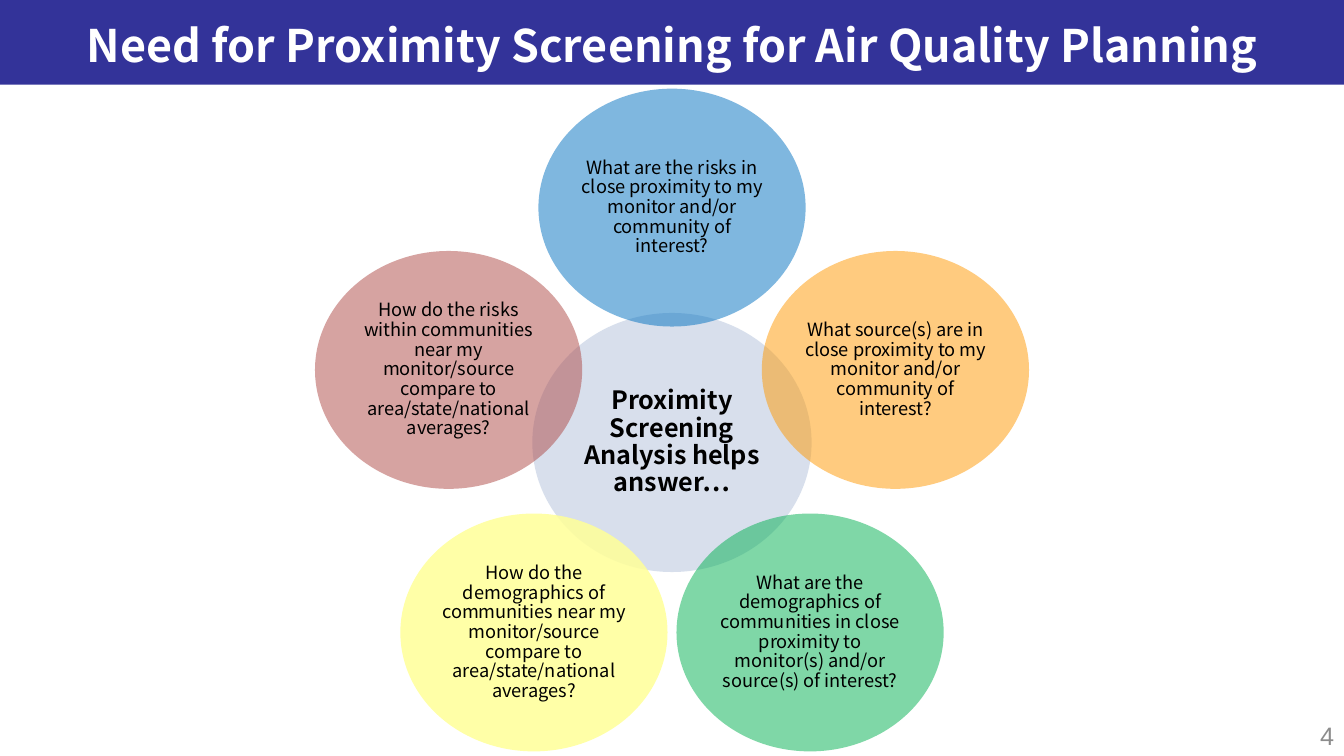
from math import cos, radians, sin

from lxml import etree
from pptx import Presentation
from pptx.dml.color import RGBColor
from pptx.enum.shapes import MSO_SHAPE as Shape
from pptx.enum.text import MSO_ANCHOR as Anchor, PP_ALIGN as Align
from pptx.oxml.ns import qn
from pptx.util import Inches, Pt

WHITE = RGBColor(0xFF, 0xFF, 0xFF)
BLACK = RGBColor(0x00, 0x00, 0x00)
GRAY = RGBColor(0x8C, 0x8C, 0x8C)
NAVY = RGBColor(0x33, 0x33, 0x99)
PALE_BLUE = RGBColor(0xB2, 0xC1, 0xDB)
BLUE = RGBColor(0x00, 0x70, 0xC0)
ORANGE = RGBColor(0xFF, 0x99, 0x00)
GREEN = RGBColor(0x00, 0xB0, 0x50)
YELLOW = RGBColor(0xFF, 0xFF, 0x99)
RED = RGBColor(0xAE, 0x48, 0x45)

TEXT_FONT = "Noto Sans CJK SC"
SLIDE_WIDTH, SLIDE_HEIGHT = 13.33, 7.5
CENTER_X, CENTER_Y = SLIDE_WIDTH / 2, 4.39
RING_RADIUS = 2.33

# Clockwise from the top: question, colour, opacity in percent
QUESTIONS = [
    ("What are the risks in close proximity to my monitor and/or "
     "community of interest?", BLUE, 50),
    ("What source(s) are in close proximity to my monitor and/or "
     "community of interest?", ORANGE, 50),
    ("What are the demographics of communities in close proximity to "
     "monitor(s) and/or source(s) of interest?", GREEN, 50),
    ("How do the demographics of communities near my monitor/source "
     "compare to area/state/national averages?", YELLOW, 86),
    ("How do the risks within communities near my monitor/source "
     "compare to area/state/national averages?", RED, 50),
]


def write_text(shape, text, size, color=BLACK, font=TEXT_FONT, bold=False,
               align=Align.CENTER, anchor=Anchor.MIDDLE, spacing=None, inset=None):
    frame = shape.text_frame
    frame.word_wrap = True
    frame.vertical_anchor = anchor
    if inset is not None:
        frame.margin_left = frame.margin_right = Inches(inset)
        frame.margin_top = frame.margin_bottom = Inches(inset)
    paragraph = frame.paragraphs[0]
    paragraph.alignment = align
    paragraph.line_spacing = spacing
    run = paragraph.add_run()
    run.text = text
    run.font.size = Pt(size)
    run.font.name = font
    run.font.bold = bold
    run.font.color.rgb = color


def add_filled(slide, kind, left, top, width, height, color, opacity=100):
    shape = slide.shapes.add_shape(
        kind, Inches(left), Inches(top), Inches(width), Inches(height))
    shape.shadow.inherit = False
    shape.line.fill.background()
    shape.fill.solid()
    shape.fill.fore_color.rgb = color
    if opacity < 100:
        color_element = shape.fill._xPr.find(qn("a:solidFill"))[0]
        alpha = etree.SubElement(color_element, qn("a:alpha"))
        alpha.set("val", str(opacity * 1000))
    return shape


def add_circle(slide, center_x, center_y, width, height, color, opacity):
    return add_filled(slide, Shape.OVAL, center_x - width / 2,
                      center_y - height / 2, width, height, color, opacity)


def add_text_box(slide, left, top, width, height, text, size, **text_format):
    box = slide.shapes.add_textbox(
        Inches(left), Inches(top), Inches(width), Inches(height))
    write_text(box, text, size, **text_format)


def add_question_ring(slide):
    step = 360 / len(QUESTIONS)
    for index, (question, color, opacity) in enumerate(QUESTIONS):
        angle = radians(index * step)
        circle = add_circle(slide, CENTER_X + RING_RADIUS * sin(angle),
                            CENTER_Y - RING_RADIUS * cos(angle),
                            2.65, 2.36, color, opacity)
        write_text(circle, question, 13, spacing=0.9, inset=0.02)


def main():
    presentation = Presentation()
    presentation.slide_width = Inches(SLIDE_WIDTH)
    presentation.slide_height = Inches(SLIDE_HEIGHT)
    slide = presentation.slides.add_slide(presentation.slide_layouts[6])

    # Title band
    add_filled(slide, Shape.RECTANGLE, 0, 0, SLIDE_WIDTH, 0.84, NAVY)
    add_text_box(slide, 0.3, 0.08, 12.74, 0.73,
                 "Need for Proximity Screening for Air Quality Planning", 32,
                 color=WHITE, bold=True)

    # Hub and the questions around it
    hub = add_circle(slide, CENTER_X, CENTER_Y, 2.77, 2.57, PALE_BLUE, 50)
    write_text(hub, "Proximity Screening Analysis helps answer…", 18,
               bold=True, spacing=0.9, inset=0.03)
    add_question_ring(slide)

    # Slide number
    add_text_box(slide, 11, 7.1, 2.33, 0.4, "4", 18, color=GRAY, font="Arial",
                 align=Align.RIGHT, anchor=Anchor.TOP)

    presentation.save("out.pptx")


if __name__ == "__main__":
    main()
